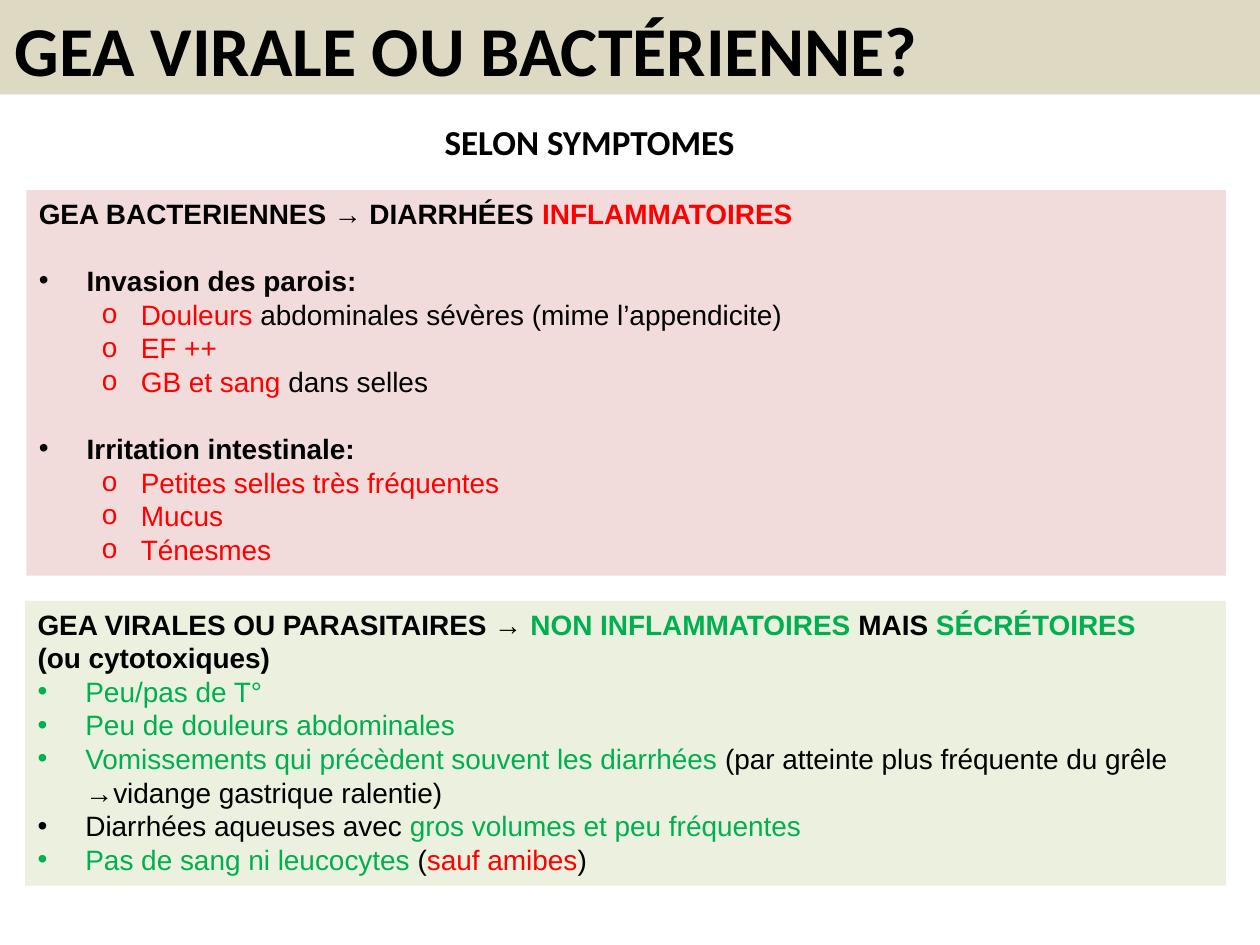
from dataclasses import dataclass

from lxml.etree import SubElement
from pptx import Presentation
from pptx.dml.color import RGBColor
from pptx.enum.shapes import MSO_SHAPE
from pptx.enum.text import MSO_ANCHOR, PP_ALIGN
from pptx.oxml.ns import qn
from pptx.slide import Slide
from pptx.util import Inches, Pt

BLACK = RGBColor(0x00, 0x00, 0x00)
RED = RGBColor(0xFF, 0x00, 0x00)
GREEN = RGBColor(0x00, 0xB0, 0x50)
SAND = RGBColor(0xDD, 0xD9, 0xC3)
PINK = RGBColor(0xF2, 0xDC, 0xDB)
PALE_GREEN = RGBColor(0xEB, 0xF1, 0xDE)

COLUMNS, ROWS = 100, 75

HEADING = {"bold": True}
TOPIC = {"bold": True, "bullet": "•", "margin": 0.38, "hang": 0.38}
TOPIC_AFTER_GAP = {**TOPIC, "gap": True}
POINT = {**TOPIC, "bold": False}
DETAIL = {"bullet": "o", "margin": 0.81, "hang": 0.31, "level": 1}

BACTERIAL = [
    (HEADING, [("GEA BACTERIENNES → DIARRHÉES ", BLACK), ("INFLAMMATOIRES", RED)]),
    (TOPIC_AFTER_GAP, [("Invasion des parois:", BLACK)]),
    (DETAIL, [("Douleurs", RED), (" abdominales sévères (mime l’appendicite)", BLACK)]),
    (DETAIL, [("EF ++", RED)]),
    (DETAIL, [("GB et sang ", RED), ("dans selles", BLACK)]),
    (TOPIC_AFTER_GAP, [("Irritation intestinale:", BLACK)]),
    (DETAIL, [("Petites selles très fréquentes", RED)]),
    (DETAIL, [("Mucus", RED)]),
    (DETAIL, [("Ténesmes", RED)]),
]
VIRAL = [
    (HEADING, [("GEA VIRALES OU PARASITAIRES → ", BLACK), ("NON INFLAMMATOIRES ", GREEN),
               ("MAIS ", BLACK), ("SÉCRÉTOIRES", GREEN)]),
    (HEADING, [("(ou cytotoxiques)", BLACK)]),
    (POINT, [("Peu/pas de T°", GREEN)]),
    (POINT, [("Peu de douleurs abdominales", GREEN)]),
    (POINT, [("Vomissements qui précèdent souvent les diarrhées ", GREEN),
             ("(par atteinte plus fréquente du grêle →vidange gastrique ralentie)", BLACK)]),
    (POINT, [("Diarrhées aqueuses avec ", BLACK), ("gros volumes et peu fréquentes", GREEN)]),
    (POINT, [("Pas de sang ni leucocytes ", GREEN), ("(", BLACK),
             ("sauf amibes", RED), (")", BLACK)]),
]


@dataclass
class Sheet:
    page: Slide
    column: float
    row: float
    title_font: str = "Calibri"
    body_font: str = "Arial"
    body_size: float = 16
    line_height: float = 19.2

    def place(self, left, top, width, height):
        return (round(left * self.column), round(top * self.row),
                round(width * self.column), round(height * self.row))

    def band(self, area, color):
        shape = self.page.shapes.add_shape(MSO_SHAPE.RECTANGLE, *self.place(*area))
        shape.shadow.inherit = False
        shape.fill.solid()
        shape.fill.fore_color.rgb = color
        shape.line.fill.background()
        return shape

    def label(self, area, text, size):
        box = self.page.shapes.add_textbox(*self.place(*area))
        box.text_frame.word_wrap = False
        box.text_frame.text = text
        font = box.text_frame.paragraphs[0].runs[0].font
        font.name, font.size, font.bold = self.title_font, Pt(size), True
        font.color.rgb = BLACK

    def panel(self, area, color, lines):
        frame = self.band(area, color).text_frame
        frame.word_wrap = True
        frame.vertical_anchor = MSO_ANCHOR.TOP
        for index, (style, spans) in enumerate(lines):
            para = frame.paragraphs[0] if index == 0 else frame.add_paragraph()
            self.fill_line(para, style, spans)

    def fill_line(self, para, style, spans):
        para.alignment = PP_ALIGN.LEFT
        para.level = style.get("level", 0)
        para.line_spacing = Pt(self.line_height)
        if style.get("gap"):
            para.space_before = Pt(self.line_height)
        if "bullet" in style:
            properties = para._p.get_or_add_pPr()
            properties.set("marL", str(Inches(style["margin"])))
            properties.set("indent", str(-Inches(style["hang"])))
            SubElement(properties, qn("a:buFont")).set("typeface", self.body_font)
            SubElement(properties, qn("a:buChar")).set("char", style["bullet"])
        for text, color in spans:
            span = para.add_run()
            span.text = text
            span.font.name = self.body_font
            span.font.size = Pt(self.body_size)
            span.font.bold = style.get("bold", False)
            span.font.color.rgb = color


def main():
    deck = Presentation()
    deck.slide_width, deck.slide_height = Inches(10), Inches(7.5)
    page = deck.slides.add_slide(deck.slide_layouts[6])
    sheet = Sheet(page, deck.slide_width / COLUMNS, deck.slide_height / ROWS)
    sheet.band((0, 0, COLUMNS, 7.5), SAND)
    sheet.label((0.2, 0, 74.6, 7.7), "GEA VIRALE OU BACTÉRIENNE?", 40)
    sheet.panel((2.1, 15.1, 95.2, 30.6), PINK, BACTERIAL)
    sheet.panel((2, 47.7, 95.3, 22.6), PALE_GREEN, VIRAL)
    sheet.label((34.3, 9.1, 25.2, 4.4), "SELON SYMPTOMES", 20)
    deck.save("out.pptx")


if __name__ == "__main__":
    main()
